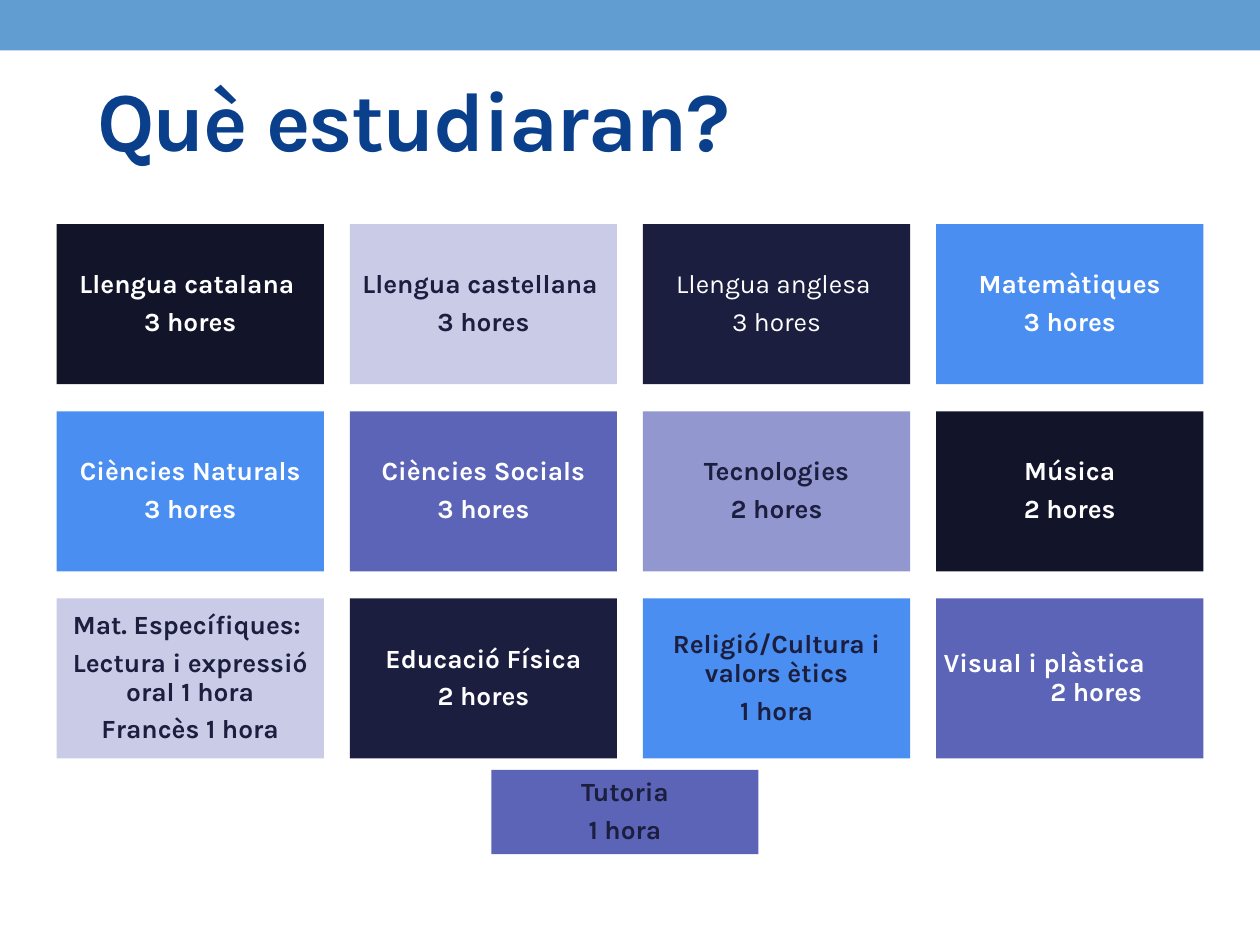
from pptx import Presentation
from pptx.dml.color import RGBColor
from pptx.enum.shapes import MSO_SHAPE
from pptx.enum.text import MSO_ANCHOR, MSO_AUTO_SIZE, PP_ALIGN
from pptx.util import Inches, Pt

FONT = "Karla"
WHITE = RGBColor(0xFF, 0xFF, 0xFF)
BAND = RGBColor(0x62, 0x9D, 0xD1)
TITLE = RGBColor(0x0A, 0x3F, 0x8C)
BLACK = RGBColor(0x12, 0x14, 0x29)
NAVY = RGBColor(0x1B, 0x1E, 0x3E)
BLUE = RGBColor(0x4A, 0x8E, 0xF2)
INDIGO = RGBColor(0x5C, 0x64, 0xB7)
LILAC = RGBColor(0x92, 0x97, 0xCF)
PALE = RGBColor(0xC9, 0xCB, 0xE7)

COLUMNS = 4
TILE_WIDTH, TILE_HEIGHT = 2.12, 1.27

# Lines, fill, text colour, bold
SUBJECTS = [
    (["Llengua catalana ", "3 hores"], BLACK, WHITE, True),
    (["Llengua castellana ", "3 hores"], PALE, NAVY, True),
    (["Llengua anglesa ", "3 hores"], NAVY, WHITE, False),
    (["Matemàtiques", "3 hores"], BLUE, WHITE, True),
    (["Ciències Naturals", "3 hores"], BLUE, WHITE, True),
    (["Ciències Socials", "3 hores"], INDIGO, WHITE, True),
    (["Tecnologies", "2 hores"], LILAC, NAVY, True),
    (["Música", "2 hores"], BLACK, WHITE, True),
    (["Mat. Específiques: ", "Lectura i expressió oral 1 hora", "Francès 1 hora"],
     PALE, NAVY, True),
    (["Educació Física", "2 hores"], NAVY, WHITE, True),
    (["Religió/Cultura i valors ètics", "1 hora"], BLUE, NAVY, True),
    (["Visual i plàstica", "2 hores"], INDIGO, WHITE, True),
]


def write(para, text, size=15, color=WHITE, bold=True, align=PP_ALIGN.CENTER,
          line=0.9, after=5.4):
    para.alignment = align
    para.line_spacing = line
    para.space_before = Pt(0)
    para.space_after = Pt(after)
    span = para.add_run()
    span.text = text
    span.font.name = FONT
    span.font.size = Pt(size)
    span.font.bold = bold
    span.font.color.rgb = color
    return span


def add_block(page, left, top, width, height, fill):
    block = page.shapes.add_shape(MSO_SHAPE.RECTANGLE, Inches(left), Inches(top),
                                  Inches(width), Inches(height))
    block.shadow.inherit = False
    block.fill.solid()
    block.fill.fore_color.rgb = fill
    block.line.fill.background()
    return block


def add_title(page, left, top, width, height):
    title = page.shapes.title
    title.left, title.top = Inches(left), Inches(top)
    title.width, title.height = Inches(width), Inches(height)
    frame = title.text_frame
    frame.auto_size = MSO_AUTO_SIZE.NONE
    frame.vertical_anchor = MSO_ANCHOR.MIDDLE
    span = write(frame.paragraphs[0], "Què estudiaran?", size=48, color=TITLE,
                 align=PP_ALIGN.LEFT, line=1.0, after=0)
    span.font._element.set("spc", "-100")


def add_tile(page, left, top, height, lines, fill, color, bold):
    tile = add_block(page, left, top, TILE_WIDTH, height, fill)
    frame = tile.text_frame
    frame.word_wrap = True
    frame.vertical_anchor = MSO_ANCHOR.MIDDLE
    frame.margin_left = frame.margin_right = Inches(0.06)
    frame.margin_top = frame.margin_bottom = Inches(0.06)
    for index, text in enumerate(lines):
        para = frame.paragraphs[0] if index == 0 else frame.add_paragraph()
        write(para, text, color=color, bold=bold)
    return tile


def stagger(tile):
    """Set the first line to the left and shift the second to the right."""
    first, second = tile.text_frame.paragraphs
    first.alignment = PP_ALIGN.LEFT
    first.space_after = Pt(0)
    second._p.get_or_add_pPr().set("marL", str(Inches(0.42)))


def add_subjects(page, left, top, width, height):
    rows = len(SUBJECTS) // COLUMNS
    step_x = (width - TILE_WIDTH) / (COLUMNS - 1)
    step_y = (height - TILE_HEIGHT) / (rows - 1)
    for index, subject in enumerate(SUBJECTS):
        row, column = divmod(index, COLUMNS)
        tile = add_tile(page, left + column * step_x, top + row * step_y,
                        TILE_HEIGHT, *subject)
    stagger(tile)


def main():
    deck = Presentation()
    deck.slide_width, deck.slide_height = Inches(10), Inches(7.5)
    page = deck.slides.add_slide(deck.slide_layouts[5])
    add_block(page, 0, 0, 10, 0.4, BAND)
    add_title(page, 0.67, 0.52, 8.93, 0.83)
    add_subjects(page, 0.45, 1.78, 9.1, 4.24)
    add_tile(page, 3.9, 6.11, 0.67, ["Tutoria", "1 hora"], INDIGO, NAVY, True)
    deck.save("out.pptx")


if __name__ == "__main__":
    main()
